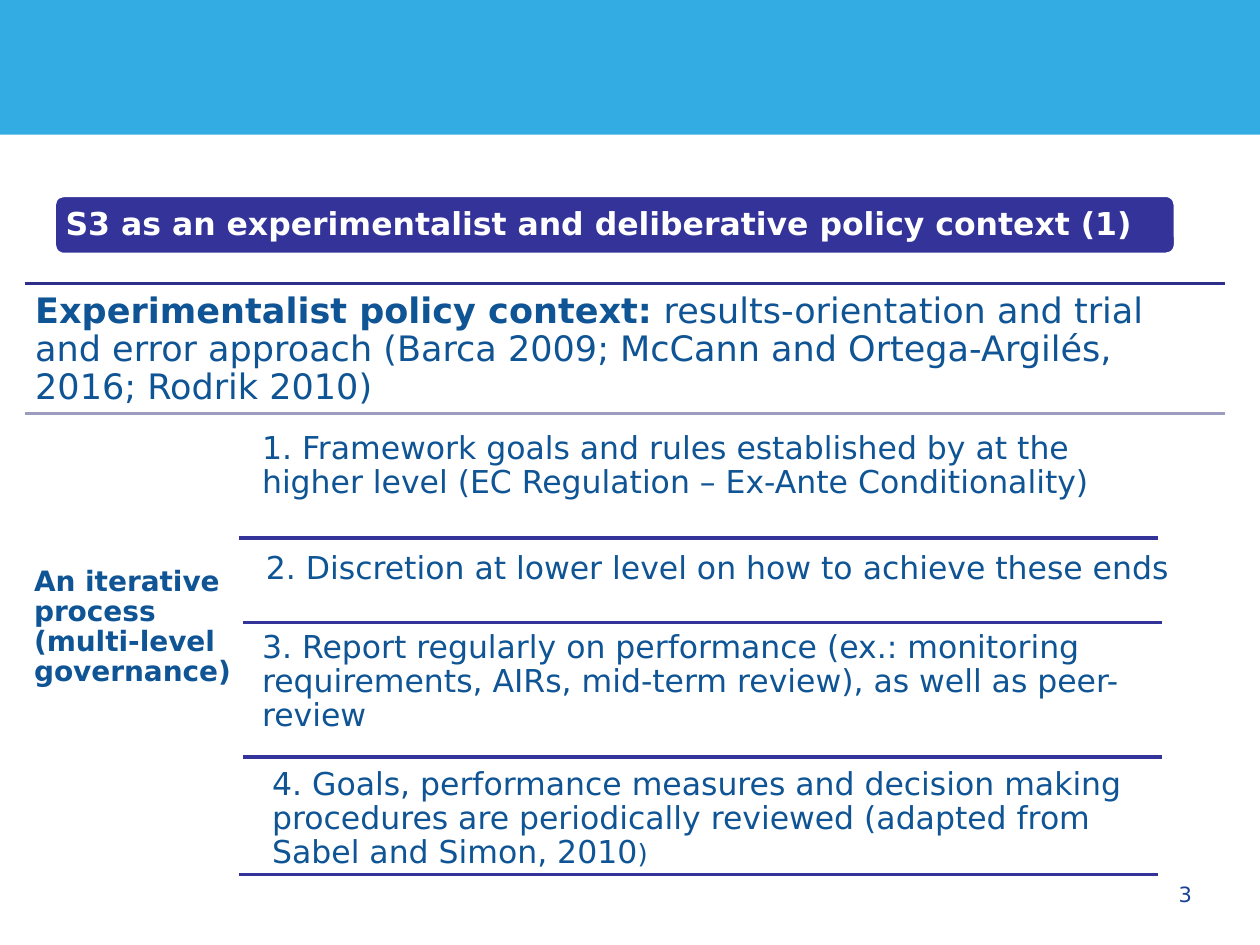
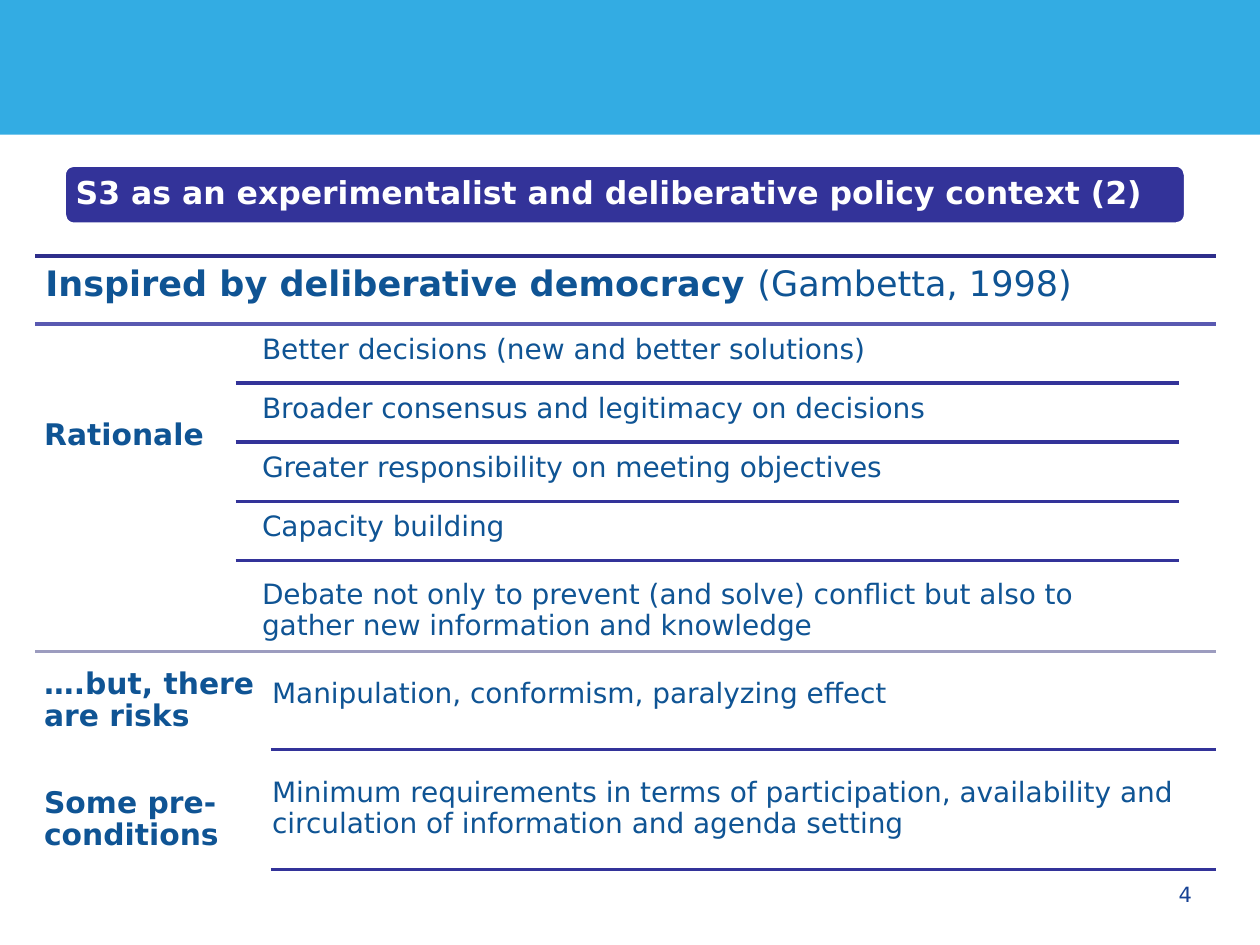
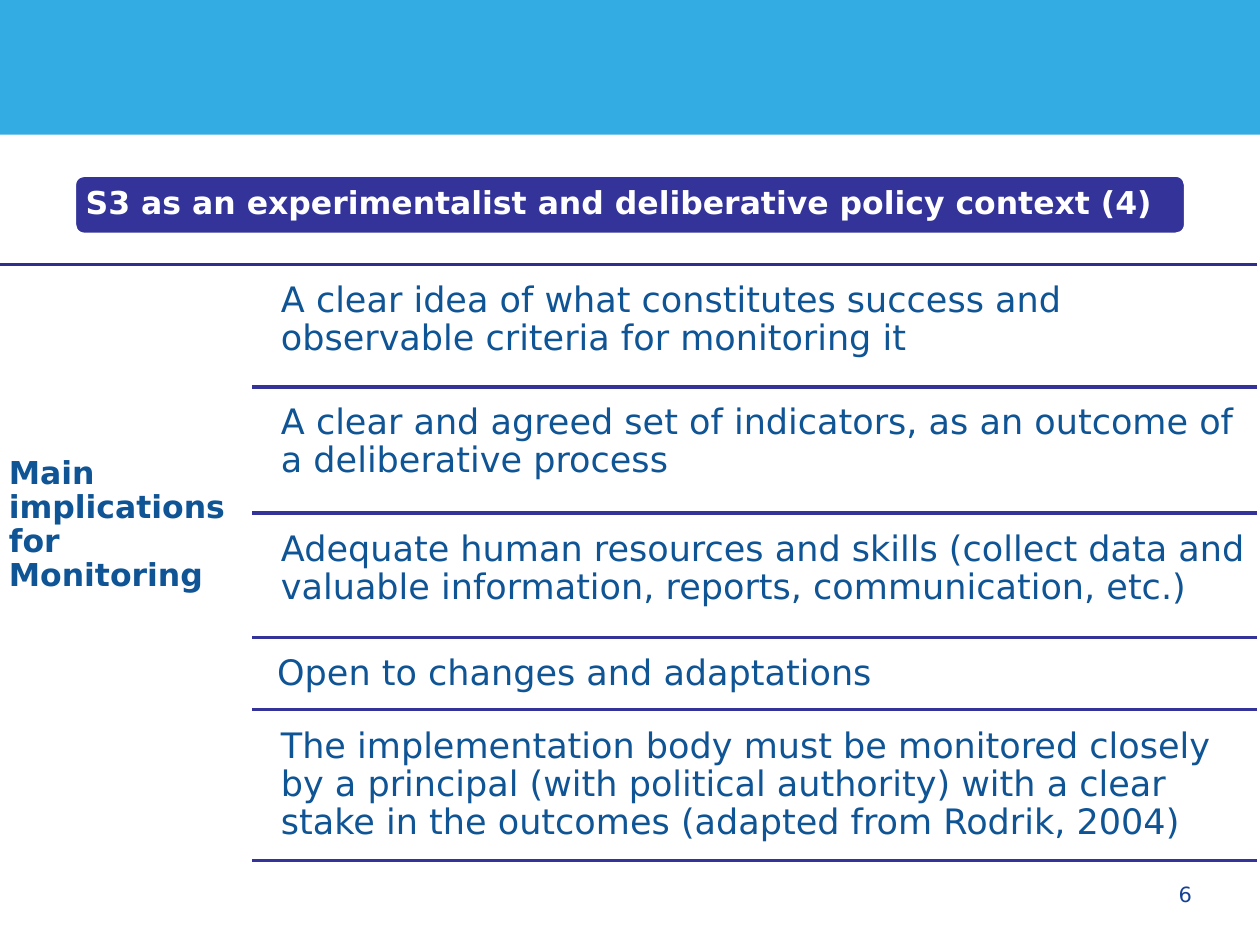
"""Build three slides on S3 as an experimentalist and deliberative policy context."""
from lxml import etree
from pptx import Presentation
from pptx.dml.color import RGBColor
from pptx.enum import shapes, text
from pptx.oxml import ns
from pptx.util import Inches, Pt

FONT = "DejaVu Sans"
COLOURS = {
    "band": "33ACE3", "title": "333399", "white": "FFFFFF", "text": "0F5494", "number": "164194",
    "item rule": "333399", "top rule": "2E2E8B", "middle rule": "5959B1", "pale rule": "9C9CBF",
}
TITLE = "S3 as an experimentalist and deliberative policy context ({})"

# Boxes are (left, top, width, height); rules are (colour, left, y, width).
SLIDES = [
    {
        "number": 3, "part": 1, "title_box": (0.43, 1.55, 8.9), "item_size": 18, "item_inset": 0.07,
        "headline": ((0.2, 2.25, 9.53, 1.03), "Experimentalist policy context:",
                     " results-orientation and trial and error approach (Barca 2009; McCann and "
                     "Ortega-Argilés, 2016; Rodrik 2010)"),
        "section_rules": [("top rule", 0.2, 2.25, 9.52), ("pale rule", 0.2, 3.28, 9.52)],
        "label_size": 16,
        "labels": [((0.2, 4.43, 1.71, 1.1), "An iterative process (multi-level governance)")],
        "items": [
            ((2.01, 3.36, 7.15, 0.77), "1. Framework goals and rules established by at the higher level "
                                       "(EC Regulation – Ex-Ante Conditionality)"),
            ((2.04, 4.31, 7.59, 0.6), "2. Discretion at lower level on how to achieve these ends"),
            ((2.01, 4.94, 7.68, 0.98), "3. Report regularly on performance (ex.: monitoring requirements, "
                                       "AIRs, mid-term review), as well as peer-review"),
            ((2.09, 6.03, 7.15, 0.9), "4. Goals, performance measures and decision making procedures are "
                                      "periodically reviewed (adapted from Sabel and Simon, 2010", (")", 15)),
        ],
        "item_rules": [(1.9, 4.27, 7.29), (1.93, 4.94, 7.29), (1.93, 6.01, 7.29), (1.9, 6.94, 7.29)],
    },
    {
        "number": 4, "part": 2, "title_box": (0.51, 1.31, 8.9), "item_size": 16, "item_inset": 0.07,
        "headline": ((0.28, 2.03, 9.37, 0.54), "Inspired by deliberative democracy ", "(Gambetta, 1998)"),
        "section_rules": [("top rule", 0.28, 2.03, 9.37), ("middle rule", 0.28, 2.57, 9.37),
                          ("pale rule", 0.28, 5.17, 9.37)],
        "label_size": 17,
        "labels": [((0.28, 3.26, 1.59, 0.5), "Rationale"),
                   ((0.28, 5.24, 1.87, 0.7), "….but, there are risks"),
                   ((0.28, 6.18, 1.87, 0.7), "Some pre-conditions")],
        "items": [
            *[((2.01, 2.59 + 0.47 * row, 7.36, 0.45), benefit) for row, benefit in enumerate([
                "Better decisions (new and better solutions)",
                "Broader consensus and legitimacy on decisions",
                "Greater responsibility on meeting objectives",
                "Capacity building",
            ])],
            ((2.01, 4.54, 7.36, 0.6), "Debate not only to prevent (and solve) conflict but also to gather "
                                      "new information and knowledge"),
            ((2.09, 5.32, 7.36, 0.6), "Manipulation, conformism, paralyzing effect"),
            ((2.09, 6.11, 7.36, 0.75), "Minimum requirements in terms of participation, availability and "
                                       "circulation of information and agenda setting"),
        ],
        "item_rules": [*[(1.87, 3.04 + 0.47 * row, 7.49) for row in range(4)],
                       (2.15, 5.95, 7.5), (2.15, 6.9, 7.5)],
    },
    {
        "number": 6, "part": 4, "title_box": (0.59, 1.39, 8.82), "item_size": 20, "item_inset": 0.08,
        "headline": None,
        "section_rules": [("top rule", 0, 2.1, 9.98)],
        "label_size": 18,
        "labels": [((0, 3.56, 2.02, 1.25), "Main implications for Monitoring")],
        "items": [
            ((2.15, 2.16, 7.83, 0.91), "A clear idea of what constitutes success and observable criteria "
                                       "for monitoring it"),
            ((2.15, 3.13, 7.83, 0.93), "A clear and agreed set of indicators, as an outcome of a "
                                       "deliberative process"),
            ((2.15, 4.14, 7.83, 0.93), "Adequate human resources and skills (collect data and valuable "
                                       "information, reports, communication, etc.)"),
            ((2.12, 5.12, 7.83, 0.5), "Open to changes and adaptations"),
            ((2.15, 5.7, 7.83, 1.14), "The implementation body must be monitored closely by a principal "
                                      "(with political authority) with a clear stake in the outcomes "
                                      "(adapted from Rodrik, 2004)"),
        ],
        "item_rules": [(2, y, 7.98) for y in (3.07, 4.07, 5.06, 5.63, 6.83)],
    },
]


def colour(name):
    return RGBColor.from_string(COLOURS[name])


def write(shape, runs, inset=(0.07, 0.07), tone="text", anchor=text.MSO_ANCHOR.TOP,
          align=text.PP_ALIGN.LEFT, spacing=0.9):
    """Fill a shape with one paragraph of (text, size, bold) runs."""
    frame = shape.text_frame
    frame.word_wrap = True
    frame.auto_size = text.MSO_AUTO_SIZE.NONE
    frame.vertical_anchor = anchor
    frame.margin_left = frame.margin_right = Inches(inset[0])
    frame.margin_top = frame.margin_bottom = Inches(inset[1])
    paragraph = frame.paragraphs[0]
    paragraph.alignment = align
    paragraph.line_spacing = spacing
    for content, size, bold in runs:
        run = paragraph.add_run()
        run.text = content
        run.font.name = FONT
        run.font.size = Pt(size)
        run.font.bold = bold
        run.font.color.rgb = colour(tone)


def add_text(slide, box, runs, **style):
    write(slide.shapes.add_textbox(*map(Inches, box)), runs, **style)


def add_block(slide, kind, box, fill):
    block = slide.shapes.add_shape(kind, *map(Inches, box))
    block.shadow.inherit = False
    block.fill.solid()
    block.fill.fore_color.rgb = colour(fill)
    block.line.fill.background()
    return block


def add_rule(slide, tone, left, y, width):
    rule = slide.shapes.add_connector(shapes.MSO_CONNECTOR.STRAIGHT, Inches(left), Inches(y),
                                      Inches(left + width), Inches(y))
    rule.line.color.rgb = colour(tone)
    rule.line.width = Pt(2)
    etree.SubElement(rule.element.spPr, ns.qn("a:effectLst"))


def add_title(slide, box, part):
    left, top, width = box
    panel = add_block(slide, shapes.MSO_SHAPE.ROUNDED_RECTANGLE, (left, top, width, 0.47), "title")
    panel.line.color.rgb = colour("white")
    panel.line.width = Pt(2)
    title = slide.shapes.title
    title.left, title.top = Inches(left + 0.02), Inches(top + 0.02)
    title.width, title.height = Inches(width - 0.05), Inches(0.43)
    write(title, [(TITLE.format(part), 18, True)], tone="white", anchor=text.MSO_ANCHOR.MIDDLE)
    panel.element.addnext(title.element)


def add_slide(presentation, content):
    slide = presentation.slides.add_slide(presentation.slide_layouts.get_by_name("Title Only"))
    add_block(slide, shapes.MSO_SHAPE.RECTANGLE, (0, 0, 10, 1.07), "band")
    add_text(slide, (7.23, 6.9, 2.33, 0.4), [(str(content["number"]), 12, False)], inset=(0.1, 0),
             tone="number", anchor=text.MSO_ANCHOR.MIDDLE, align=text.PP_ALIGN.RIGHT, spacing=1.0)
    add_title(slide, content["title_box"], content["part"])
    for rule in content["section_rules"]:
        add_rule(slide, *rule)
    if content["headline"]:
        box, lead, rest = content["headline"]
        add_text(slide, box, [(lead, 20, True), (rest, 20, False)], inset=(0.08, 0.08))
    for box, label in content["labels"]:
        add_text(slide, box, [(label, content["label_size"], True)])
    for box, item, *endings in content["items"]:
        runs = [(item, content["item_size"], False)]
        runs += [(ending, size, False) for ending, size in endings]
        add_text(slide, box, runs, inset=(content["item_inset"],) * 2)
    for rule in content["item_rules"]:
        add_rule(slide, "item rule", *rule)


def main():
    presentation = Presentation()
    presentation.slide_width, presentation.slide_height = Inches(10), Inches(7.5)
    for content in SLIDES:
        add_slide(presentation, content)
    presentation.save("out.pptx")


if __name__ == "__main__":
    main()
